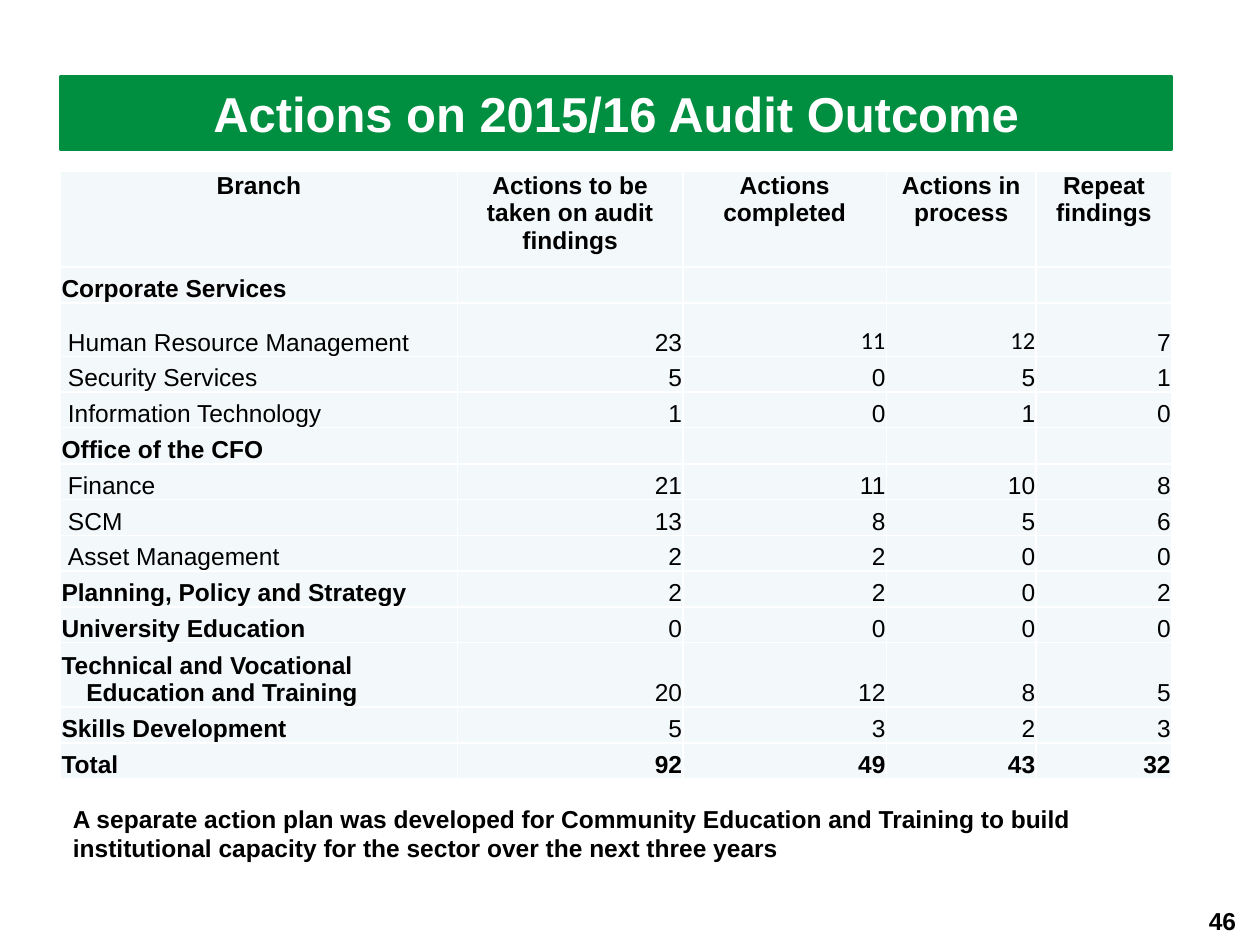
"""Build the slide on actions taken after the 2015/16 audit."""
from pptx import Presentation
from pptx import util as u
from pptx.dml.color import RGBColor
from pptx.enum import text

GREEN = RGBColor(0x00, 0x8E, 0x40)
WHITE = RGBColor(0xFF, 0xFF, 0xFF)
BLACK = RGBColor(0x00, 0x00, 0x00)
PALE = RGBColor(0xF3, 0xF9, 0xFA)

LEFT, WIDTH = u.Cm(1.22), u.Cm(22.4)
ALIGN = text.PP_ALIGN
ANCHOR = text.MSO_ANCHOR
BOLD_TEXT = {"name": "Arial", "size": u.Pt(14), "bold": True, "color": BLACK}


def write(frame, words, alignment, formats):
    paragraph = frame.paragraphs[0]
    paragraph.alignment = alignment
    run = paragraph.add_run()
    run.text = words
    for name, value in formats.items():
        if name == "color":
            run.font.color.rgb = value
        else:
            setattr(run.font, name, value)
    return paragraph


presentation = Presentation()
presentation.slide_width, presentation.slide_height = u.Cm(25.4), u.Cm(19.05)
slide = presentation.slides.add_slide(presentation.slide_layouts[5])

title = slide.shapes.title
title.left, title.top, title.width, title.height = LEFT, u.Cm(1.55), WIDTH, u.Cm(1.45)
title.fill.solid()
title.fill.fore_color.rgb = GREEN
title.line.color.rgb = GREEN
title.line.width = u.Pt(2)
title.text_frame.auto_size = text.MSO_AUTO_SIZE.NONE
title.text_frame.vertical_anchor = ANCHOR.MIDDLE
write(title.text_frame, "Actions on 2015/16 Audit Outcome", ALIGN.CENTER,
      {**BOLD_TEXT, "size": u.Pt(28), "color": WHITE})

HEADER, GROUP, ITEM, TOTAL = "header", "group", "item", "total"
rows = [
    (HEADER, "Branch", "Actions to be taken on audit findings", "Actions completed",
     "Actions in process", "Repeat findings"),
    (GROUP, "Corporate Services", "", "", "", ""),
    (ITEM, "Human Resource Management", 23, 11, 12, 7),
    (ITEM, "Security Services", 5, 0, 5, 1),
    (ITEM, "Information Technology", 1, 0, 1, 0),
    (GROUP, "Office of the CFO", "", "", "", ""),
    (ITEM, "Finance", 21, 11, 10, 8),
    (ITEM, "SCM", 13, 8, 5, 6),
    (ITEM, "Asset Management", 2, 2, 0, 0),
    (GROUP, "Planning, Policy and Strategy", 2, 2, 0, 2),
    (GROUP, "University Education", 0, 0, 0, 0),
    (GROUP, "Technical and Vocational Education and Training", 20, 12, 8, 5),
    (GROUP, "Skills Development", 5, 3, 2, 3),
    (TOTAL, "Total", 92, 49, 43, 32),
]
column_widths = [8, 4.55, 4.1, 3.02, 2.73]
row_heights = {0: 1.93, 2: 1.07, 11: 1.3}
calibri_cells = {(2, 2), (2, 3)}

table = slide.shapes.add_table(len(rows), len(column_widths), LEFT, u.Cm(3.45),
                               WIDTH, u.Cm(12.22)).table
table.first_row = table.horz_banding = False
for column, width in zip(table.columns, column_widths):
    column.width = u.Cm(width)

cell_format = {"margin_left": u.Cm(0.02), "margin_right": u.Cm(0.02),
               "margin_top": u.Cm(0.02), "margin_bottom": 0}
for row_index, (kind, *values) in enumerate(rows):
    table.rows[row_index].height = u.Cm(row_heights.get(row_index, 0.72))
    for column_index, value in enumerate(values):
        cell = table.cell(row_index, column_index)
        for name, setting in cell_format.items():
            setattr(cell, name, setting)
        cell.vertical_anchor = ANCHOR.TOP if kind == HEADER else ANCHOR.BOTTOM
        cell.fill.solid()
        cell.fill.fore_color.rgb = PALE
        is_label = column_index == 0
        alignment = ALIGN.CENTER if kind == HEADER else ALIGN.LEFT if is_label else ALIGN.RIGHT
        bold = kind in (HEADER, TOTAL) or (kind == GROUP and is_label)
        font = "Calibri" if (row_index, column_index) in calibri_cells else "Arial"
        paragraph = write(cell.text_frame, str(value), alignment,
                          {**BOLD_TEXT, "name": font, "bold": bold})
        if is_label and kind == ITEM:
            cell.margin_left = u.Cm(0.15)
        if is_label and kind == GROUP:
            properties = paragraph._p.get_or_add_pPr()
            properties.set("marL", str(u.Cm(0.5)))
            properties.set("indent", str(-u.Cm(0.5)))

notes = [
    ("A separate action plan was developed for Community Education and Training to build "
     "institutional capacity for the sector over the next three years",
     ALIGN.LEFT, LEFT, 16.08, WIDTH, 2.05),
    ("46", ALIGN.RIGHT, u.Cm(19.25), 18.13, u.Cm(5.92), 1.02),
]
for words, alignment, left, top, width, height in notes:
    box = slide.shapes.add_textbox(left, u.Cm(top), width, u.Cm(height))
    box.text_frame.word_wrap = True
    write(box.text_frame, words, alignment, BOLD_TEXT)

presentation.save("out.pptx")
